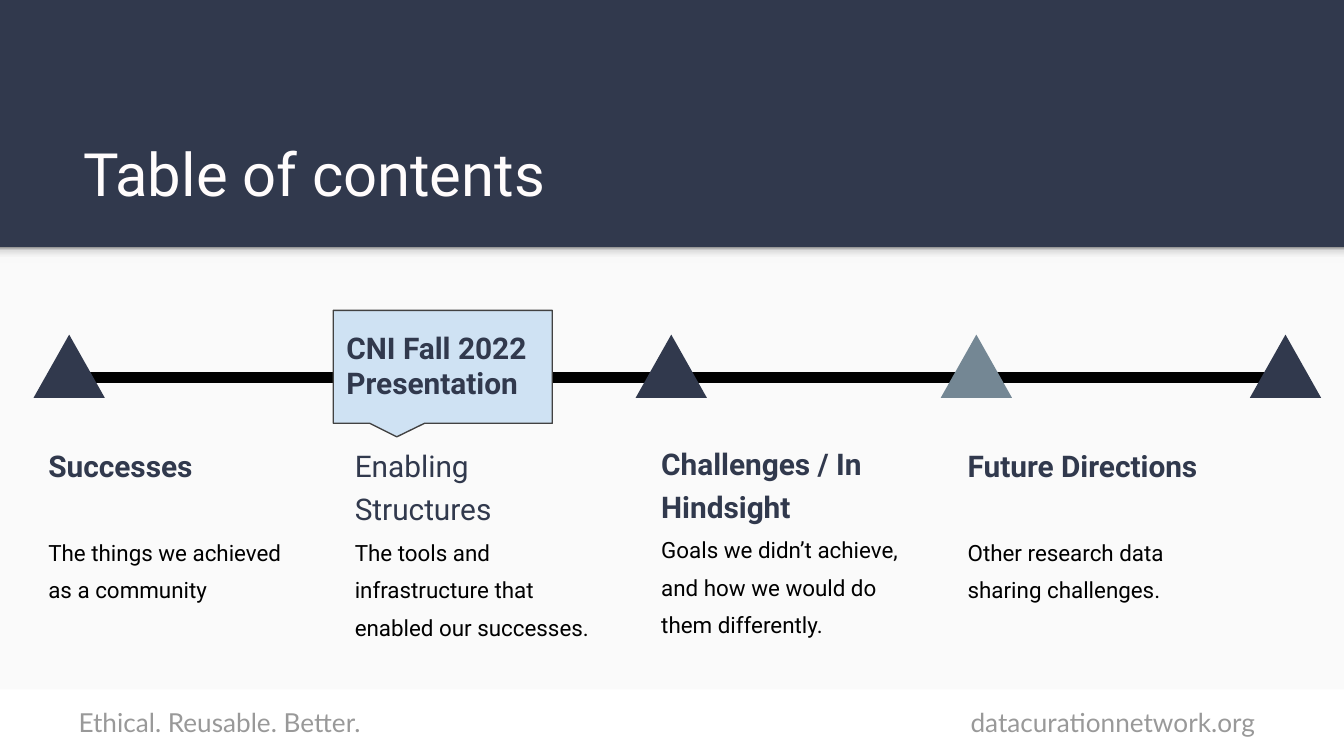
from lxml import etree
from pptx import Presentation
from pptx.dml.color import RGBColor
from pptx.enum.shapes import MSO_CONNECTOR as Line, MSO_SHAPE as Shape
from pptx.enum.text import MSO_ANCHOR as Anchor, MSO_AUTO_SIZE as Fit, PP_ALIGN as Align
from pptx.oxml.ns import qn
from pptx.util import Inches, Pt

NAVY = RGBColor(0x31, 0x39, 0x4D)
SLATE = RGBColor(0x74, 0x87, 0x94)
STEEL = RGBColor(0x86, 0x97, 0xA3)
PALE = RGBColor(0xFA, 0xFA, 0xFA)
WHITE = RGBColor(0xFF, 0xFF, 0xFF)
CREAM = RGBColor(0xFF, 0xFC, 0xFC)
BLACK = RGBColor(0x00, 0x00, 0x00)
GREY = RGBColor(0x99, 0x99, 0x99)
SKY = RGBColor(0xCF, 0xE2, 0xF3)
EDGE = RGBColor(0x42, 0x42, 0x42)
FADE = [(0, RGBColor(0xF9, 0xF9, 0xF9)), (36, RGBColor(0xF9, 0xF9, 0xF9)),
        (80, RGBColor(0xDE, 0xDE, 0xDE)), (100, GREY)]

TITLE = {"name": "Roboto", "size": Pt(32), "color": CREAM}
HEAD = {"name": "Roboto", "size": Pt(16), "color": NAVY, "bold": True}
BODY = {"name": "Roboto", "size": Pt(12), "color": BLACK}
FOOT = {"name": "Lato", "size": Pt(14), "color": GREY}

prs = Presentation()
prs.slide_width = Inches(10)
prs.slide_height = Inches(10) * 9 // 16
slide = prs.slides.add_slide(prs.slide_layouts[6])
slide.background.fill.solid()
slide.background.fill.fore_color.rgb = NAVY
shapes = slide.shapes


def add_form(kind, box, fill):
    form = shapes.add_shape(kind, *map(Inches, box))
    form.shadow.inherit = False
    form.fill.solid()
    form.fill.fore_color.rgb = fill
    form.line.fill.background()
    return form


def add_text(box, text, style, inset=0.1, align=Align.LEFT, space=1.0,
             anchor=Anchor.TOP, fit=Fit.SHAPE_TO_FIT_TEXT):
    """Add a text box with one styled paragraph."""
    frame = shapes.add_textbox(*map(Inches, box)).text_frame
    frame.word_wrap, frame.auto_size = True, fit
    frame.vertical_anchor = anchor
    for side in ("left", "top", "right", "bottom"):
        setattr(frame, f"margin_{side}", Inches(inset))
    para = frame.paragraphs[0]
    para.alignment, para.line_spacing = align, space
    run = para.add_run()
    run.text = text
    for key, value in style.items():
        if key == "color":
            run.font.color.rgb = value
        else:
            setattr(run.font, key, value)


# Backdrop: content panel, soft shade under the title band, footer strip
add_form(Shape.RECTANGLE, (0, 1.84, 10, 3.78), PALE)
shade = add_form(Shape.RECTANGLE, (0, 1.84, 10, 0.12), PALE)
shade.fill.gradient()
shade.fill.gradient_angle = 90
stops = shade.element.spPr.find(qn("a:gradFill")).find(qn("a:gsLst"))
for stop in list(stops):
    stops.remove(stop)
for place, color in FADE:
    stop = etree.SubElement(stops, qn("a:gs"), pos=str(place * 1000))
    etree.SubElement(stop, qn("a:srgbClr"), val=str(color))
add_form(Shape.RECTANGLE, (0, 5.13, 10, 0.5), WHITE)

for left, width, text in [(0.37, 2.53, "Ethical. Reusable. Better."),
                          (6.64, 3.28, "datacurationnetwork.org")]:
    add_text((left, 5.16, width, 0.44), text, FOOT, align=Align.CENTER)

# Timeline: overlapping segments, one per topic, with triangle markers
START, STEP, AXIS = 0.36, 2.28, 2.81
for i in range(4):
    left = START + STEP * i
    bar = shapes.add_connector(Line.STRAIGHT, Inches(left + 2.45), Inches(AXIS),
                               Inches(left), Inches(AXIS))
    bar.line.color.rgb = BLACK
    bar.line.width = Pt(6)
    etree.SubElement(bar.element.spPr, qn("a:effectLst"))

for left, color in [(0.25, NAVY), (2.64, STEEL), (4.73, NAVY), (7, SLATE), (9.3, NAVY)]:
    add_form(Shape.ISOSCELES_TRIANGLE, (left, 2.49, 0.53, 0.47), color)

# Topics: heading, heading height, bold, top, description, its height
TOPICS = [
    ("Successes", 0.27, True, 3.28, "The things we achieved as a community", 0.48),
    ("Enabling Structures", 0.59, False, 3.28,
     "The tools and infrastructure that enabled our successes.", 0.77),
    ("Challenges / In Hindsight", 0.59, True, 3.26,
     "Goals we didn’t achieve, and how we would do them differently.", 0.77),
    ("Future Directions", 0.27, True, 3.28,
     "Other research data sharing challenges.", 0.48),
]
for i, (head, tall, bold, top, body, deep) in enumerate(TOPICS):
    left = START + STEP * i
    add_text((left, top, 1.84, tall), head, {**HEAD, "bold": bold}, inset=0, space=1.2)
    add_text((left, top + 0.65, 1.84, deep), body, BODY, inset=0, space=1.4)

add_text((0.52, 0.81, 8.99, 0.84), "Table of contents", TITLE,
         anchor=Anchor.BOTTOM, fit=Fit.NONE)

# Callout on the current topic
callout = add_form(Shape.RECTANGULAR_CALLOUT, (2.48, 2.31, 1.63, 0.84), SKY)
callout.adjustments[0], callout.adjustments[1] = -0.21, 0.62
callout.line.color.rgb = EDGE
callout.line.width = Pt(0.75)
add_text((2.48, 2.35, 1.63, 0.74), "CNI Fall 2022 Presentation", HEAD)

prs.save("out.pptx")
